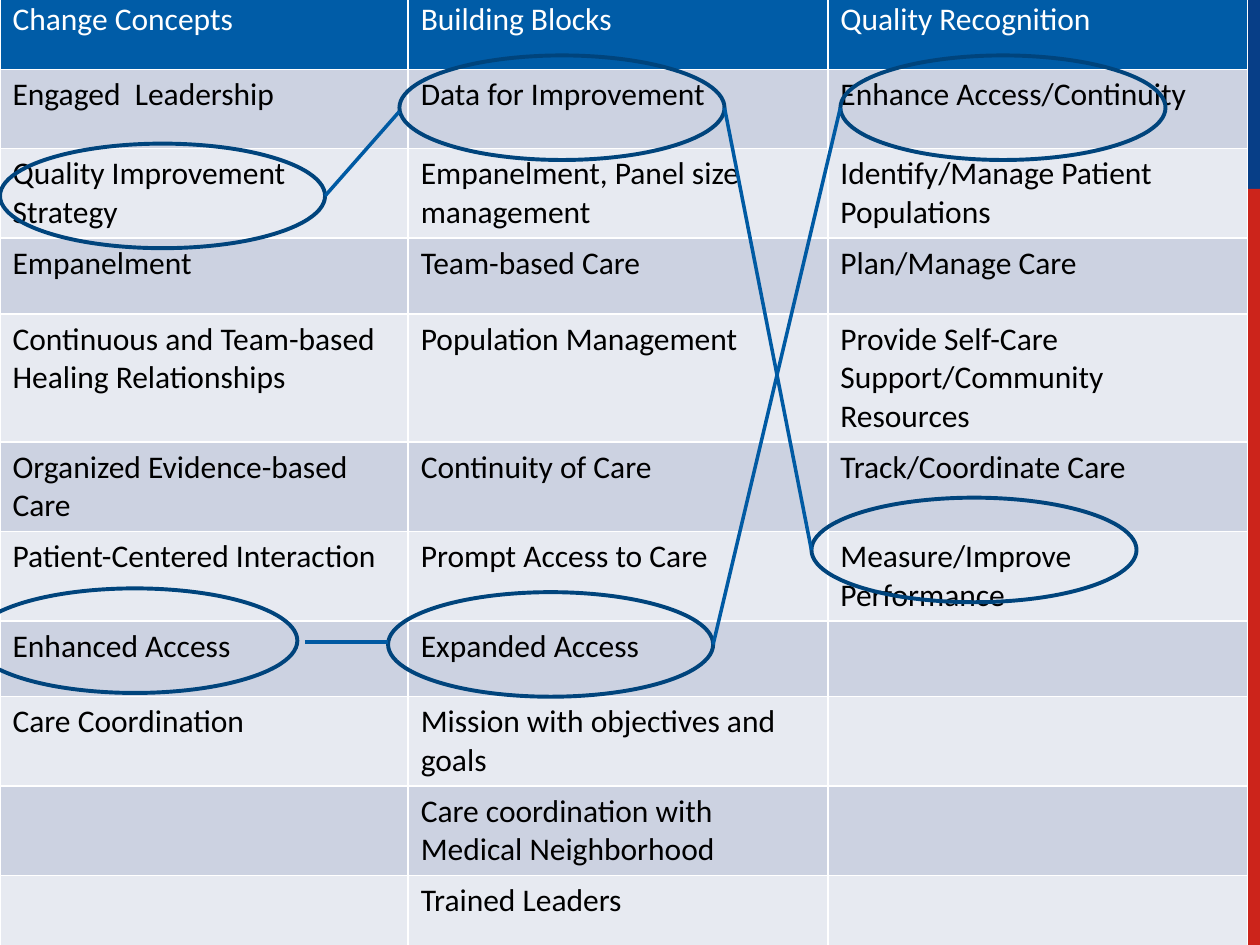
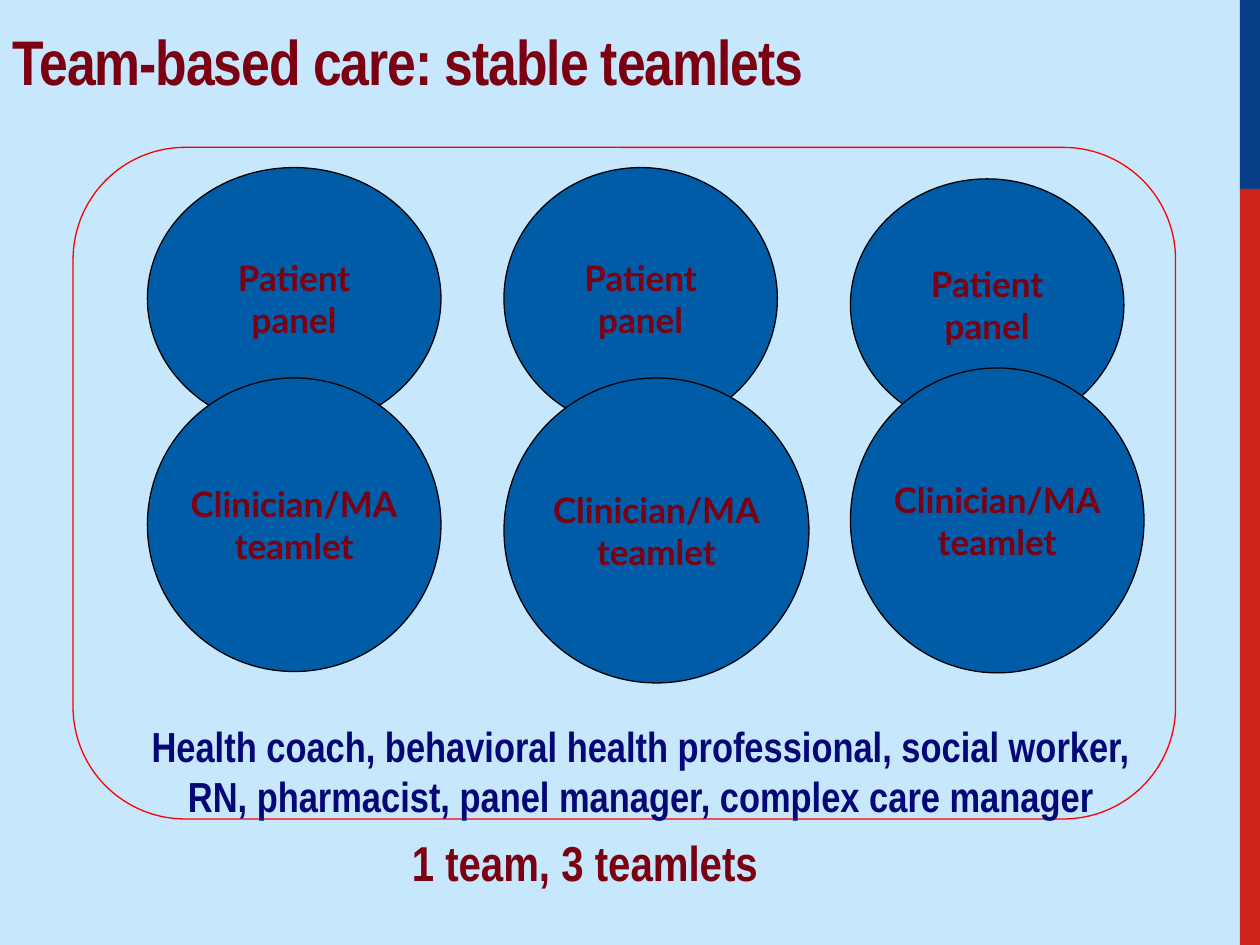
from lxml.etree import SubElement
from pptx import Presentation
from pptx.dml.color import RGBColor
from pptx.enum.shapes import MSO_CONNECTOR, MSO_SHAPE as Shape
from pptx.enum.text import MSO_ANCHOR as Anchor, MSO_AUTO_SIZE as AutoSize, PP_ALIGN as Align
from pptx.oxml.ns import qn
from pptx.util import Inches, Pt

SKY = RGBColor(0xC6, 0xE7, 0xFC)
NAVY = RGBColor(0x07, 0x3E, 0x87)
RED = RGBColor(0xCC, 0x24, 0x1B)
BLUE = RGBColor(0x00, 0x5C, 0xA7)
OVAL_BLUE = RGBColor(0x00, 0x44, 0x7C)
LINK_BLUE = RGBColor(0x00, 0x5A, 0xA3)
ODD_ROW = RGBColor(0xCC, 0xD2, 0xE1)
EVEN_ROW = RGBColor(0xE7, 0xEA, 0xF1)
MAROON = RGBColor(0x7B, 0x00, 0x11)
INDIGO = RGBColor(0x05, 0x07, 0x77)
FRAME_RED = RGBColor(0xFF, 0x00, 0x00)
BLACK = RGBColor(0x00, 0x00, 0x00)
WHITE = RGBColor(0xFF, 0xFF, 0xFF)

WIDTH, HEIGHT = 10, 7.5
BAND_WIDTH = 0.16
BANDS = [(0, 0.2, NAVY), (0.2, 0.8, RED)]

TITLE_FONT = {"name": "Arial Narrow", "size": Pt(36), "bold": True}
SUMMARY_FONT = {"name": "Arial Narrow", "size": Pt(28), "bold": True}
ROLES_FONT = {"name": "Arial Narrow", "size": Pt(24), "bold": True}
CIRCLE_FONT = {"name": "Lato", "size": Pt(20), "bold": True}
CELL_FONT = {"name": "Calibri", "size": Pt(18), "bold": False}

TABLE_BOX = (0, -0.05, 9.9, 7.54)
COLUMN_WIDTHS = [3.24, 3.33, 3.33]
ROWS = [
    (0.6, "Change Concepts", "Building Blocks", "Quality Recognition"),
    (0.63, "Engaged  Leadership", "Data for Improvement", "Enhance Access/Continuity"),
    (0.68, "Quality Improvement Strategy", "Empanelment, Panel size management",
     "Identify/Manage Patient Populations"),
    (0.6, "Empanelment", "Team-based Care", "Plan/Manage Care"),
    (0.9, "Continuous and Team-based Healing Relationships", "Population Management",
     "Provide Self-Care Support/Community Resources"),
    (0.68, "Organized Evidence-based Care", "Continuity of Care", "Track/Coordinate Care"),
    (0.68, "Patient-Centered Interaction", "Prompt Access to Care", "Measure/Improve Performance"),
    (0.6, "Enhanced Access", "Expanded Access", ""),
    (0.68, "Care Coordination", "Mission with objectives and goals", ""),
    (0.68, "", "Care coordination with Medical Neighborhood", ""),
    (0.6, "", "Trained Leaders", ""),
]

OVAL_WIDTH, OVAL_HEIGHT = 2.58, 0.83
OVALS = {
    "quality": (0, 1.14),
    "data": (3.17, 0.44),
    "measure": (6.44, 3.95),
    "enhance": (6.67, 0.44),
    "expanded": (3.08, 4.7),
    "enhanced": (-0.22, 4.67),
}
LINKS = [
    ("quality", "data", 0, 0, 0.03),
    ("data", "measure", 0, 0, 0),
    ("expanded", "enhance", 0, 0, 0),
    ("enhanced", "expanded", 0.06, 0.01, -0.02),
]

TITLE = "Team-based care: stable teamlets"
PANEL_LINES = ["Patient", "panel"]
TEAMLET_LINES = ["Clinician/MA", "teamlet"]
TEAMS = [
    {"left": 1.17, "panel": (1.33, 2.33, 2.08), "teamlet": (3, 2.33, 2.33)},
    {"left": 4, "panel": (1.33, 2.17, 2.08), "teamlet": (3, 2.42, 2.42)},
    {"left": 6.75, "panel": (1.42, 2.17, 2), "teamlet": (2.92, 2.33, 2.42)},
]
ROLES = ("Health coach, behavioral health professional, social worker, "
         "RN, pharmacist, panel manager, complex care manager")
SUMMARY = "1 team, 3 teamlets"


def inches(*lengths):
    return [Inches(length) for length in lengths]


def apply(target, values):
    for name, value in values.items():
        setattr(target, name, value)


def write(text_frame, lines, font, color, align=Align.LEFT):
    for index, line in enumerate(lines):
        paragraph = text_frame.add_paragraph() if index else text_frame.paragraphs[0]
        paragraph.alignment = align
        run = paragraph.add_run()
        run.text = line
        apply(run.font, font)
        run.font.color.rgb = color
    return run


def add_shape(slide, kind, box, fill=None, line=None, line_width=0.75):
    shape = slide.shapes.add_shape(kind, *inches(*box))
    shape.shadow.inherit = False
    for part, color in ((shape.fill, fill), (shape.line.fill, line)):
        if color is None:
            part.background()
        else:
            part.solid()
            part.fore_color.rgb = color
    if line is not None:
        shape.line.width = Pt(line_width)
    return shape


def add_link(slide, start, end):
    link = slide.shapes.add_connector(MSO_CONNECTOR.STRAIGHT, *inches(*start, *end))
    link.line.color.rgb = LINK_BLUE
    link.line.width = Pt(2)
    SubElement(link._element.spPr, qn("a:effectLst"))


def add_text(slide, box, text, font, color, align=Align.LEFT):
    text_frame = slide.shapes.add_textbox(*inches(*box)).text_frame
    text_frame.word_wrap = True
    write(text_frame, [text], font, color, align)


def add_circle(slide, box, lines):
    circle = add_shape(slide, Shape.OVAL, box, BLUE, BLACK)
    apply(circle.text_frame, {"word_wrap": False, "vertical_anchor": Anchor.MIDDLE})
    write(circle.text_frame, lines, CIRCLE_FONT, MAROON, Align.CENTER)


def add_slide(presentation, layout_index):
    slide = presentation.slides.add_slide(presentation.slide_layouts[layout_index])
    for top, share, color in BANDS:
        box = (WIDTH - BAND_WIDTH, top * HEIGHT, BAND_WIDTH, share * HEIGHT)
        add_shape(slide, Shape.RECTANGLE, box, color)
    return slide


def add_comparison(slide):
    table = slide.shapes.add_table(len(ROWS), len(COLUMN_WIDTHS), *inches(*TABLE_BOX)).table
    for column, width in zip(table.columns, COLUMN_WIDTHS):
        column.width = Inches(width)
    for index, (height, *texts) in enumerate(ROWS):
        table.rows[index].height = Inches(height)
        fill = BLUE if index == 0 else ODD_ROW if index % 2 else EVEN_ROW
        for cell, text in zip(table.rows[index].cells, texts):
            cell.fill.solid()
            cell.fill.fore_color.rgb = fill
            if text:
                write(cell.text_frame, [text], CELL_FONT, BLACK if index else WHITE)


def add_matches(slide):
    for left, top in OVALS.values():
        add_shape(slide, Shape.OVAL, (left, top, OVAL_WIDTH, OVAL_HEIGHT),
                  line=OVAL_BLUE, line_width=2.25)
    middle = OVAL_HEIGHT / 2
    for source, target, gap, start_drop, end_drop in LINKS:
        (left, top), (end_left, end_top) = OVALS[source], OVALS[target]
        add_link(slide, (left + OVAL_WIDTH + gap, top + middle + start_drop),
                 (end_left, end_top + middle + end_drop))


def add_teams(slide):
    title = slide.shapes.title
    apply(title, dict(zip(("left", "top", "width", "height"), inches(0, 0.33, 8.5, 0.5))))
    apply(title.text_frame, {"vertical_anchor": Anchor.BOTTOM, "word_wrap": True,
                             "auto_size": AutoSize.NONE})
    run = write(title.text_frame, [TITLE], TITLE_FONT, MAROON)
    run.font._element.set("spc", "-60")

    frame = add_shape(slide, Shape.ROUNDED_RECTANGLE, (0.58, 1.17, 8.75, 5.33), line=FRAME_RED)
    frame.adjustments[0] = 0.167
    for team in TEAMS:
        for part, lines in (("panel", PANEL_LINES), ("teamlet", TEAMLET_LINES)):
            add_circle(slide, (team["left"], *team[part]), lines)
    add_text(slide, (1, 5.67, 8.17, 0.9), ROLES, ROLES_FONT, INDIGO, Align.CENTER)
    add_text(slide, (3.17, 6.56, 5.27, 0.57), SUMMARY, SUMMARY_FONT, MAROON)


def main():
    presentation = Presentation()
    apply(presentation, {"slide_width": Inches(WIDTH), "slide_height": Inches(HEIGHT)})
    background = presentation.slide_master.background.fill
    background.solid()
    background.fore_color.rgb = SKY

    comparison = add_slide(presentation, 6)
    add_comparison(comparison)
    add_matches(comparison)
    add_teams(add_slide(presentation, 5))
    presentation.save("out.pptx")


if __name__ == "__main__":
    main()
